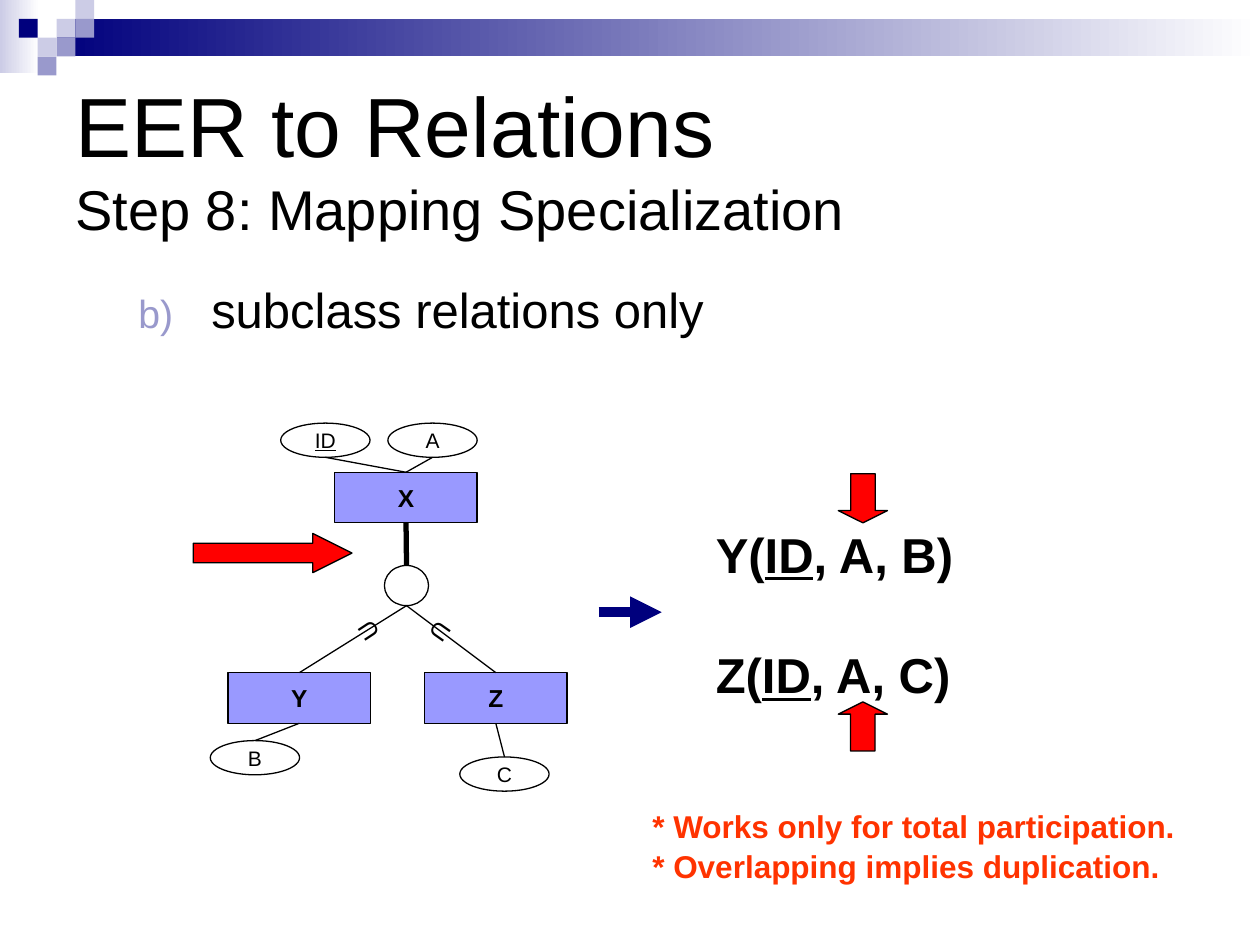
from lxml.etree import SubElement
from pptx import Presentation
from pptx.dml.color import RGBColor
from pptx.enum.shapes import MSO_CONNECTOR, MSO_SHAPE
from pptx.enum.text import MSO_ANCHOR, MSO_AUTO_SIZE, PP_ALIGN
from pptx.oxml.ns import qn
from pptx.util import Cm, Pt

BLACK, WHITE, NAVY, RED = "000000", "FFFFFF", "00007D", "FF0000"
LILAC, PALE, ENTITY, NOTE = "9999CC", "CCCCE6", "9999FF", "FF3300"


def rgb(color):
    return RGBColor.from_string(color)


def style(r, size, color=BLACK, bold=False, underline=None):
    r.font.name = "Arial"
    r.font.size = Pt(size)
    r.font.bold = bold
    r.font.underline = underline
    r.font.color.rgb = rgb(color)


def add_shape(s, kind, x, y, w, h, fill, line=BLACK):
    sp = s.shapes.add_shape(kind, Cm(x), Cm(y), Cm(w), Cm(h))
    sp.shadow.inherit = False
    sp.fill.solid()
    sp.fill.fore_color.rgb = rgb(fill)
    if line:
        sp.line.color.rgb = rgb(line)
        sp.line.width = Pt(0.75)
    else:
        sp.line.fill.background()
    return sp


def add_node(s, kind, x, y, w, h, fill, label, size, bold=False, underline=None):
    sp = add_shape(s, kind, x, y, w, h, fill)
    tf = sp.text_frame
    tf.word_wrap = False
    tf.vertical_anchor = MSO_ANCHOR.MIDDLE
    tf.text = label
    p = tf.paragraphs[0]
    p.alignment = PP_ALIGN.CENTER
    style(p.runs[0], size, BLACK, bold, underline)
    return sp


def add_text(s, x, y, w, h, text, wrap=True):
    tb = s.shapes.add_textbox(Cm(x), Cm(y), Cm(w), Cm(h))
    tb.text_frame.word_wrap = wrap
    tb.text_frame.text = text
    return tb


def add_line(s, x1, y1, x2, y2, color=BLACK, width=0.75):
    ln = s.shapes.add_connector(MSO_CONNECTOR.STRAIGHT, x1, y1, x2, y2)
    ln.line.color.rgb = rgb(color)
    ln.line.width = Pt(width)
    SubElement(ln._element.spPr, qn("a:effectLst"))
    return ln


def link(s, upper, lower, width=0.75):
    add_line(s, upper.left + upper.width // 2, upper.top + upper.height,
             lower.left + lower.width // 2, lower.top, width=width)


def add_arrow(s, x, y, w, h, rotation, head):
    sp = add_shape(s, MSO_SHAPE.UP_ARROW, x, y, w, h, RED)
    sp.adjustments[0] = 0.5
    sp.adjustments[1] = head
    sp.rotation = rotation


def add_banner(s, x, y):
    for dx, dy, w, h, start in ((0, 0, 0.79, 1.47, PALE), (1.14, 0.38, 24.26, 0.76, NAVY)):
        sp = add_shape(s, MSO_SHAPE.RECTANGLE, x + dx, y + dy, w, h, WHITE, None)
        sp.fill.gradient()
        sp.fill.gradient_angle = 0
        for stop, color in zip(sp.fill.gradient_stops, (start, WHITE)):
            stop.color.rgb = rgb(color)
    unit = 0.38
    tiles = ((3, 1, PALE), (4, 0, PALE), (4, 1, LILAC), (2, 2, PALE),
             (1, 1, NAVY), (3, 2, LILAC), (2, 3, LILAC))
    for col, row, color in tiles:
        add_shape(s, MSO_SHAPE.RECTANGLE, x + col * unit, y + row * unit,
                  unit, unit, color, None)


def add_heading(s, x, y):
    tf = add_text(s, x, y, 22.86, 3.81,
                  "EER to Relations\vStep 8: Mapping Specialization").text_frame
    tf.vertical_anchor = MSO_ANCHOR.MIDDLE
    for r, size in zip(tf.paragraphs[0].runs, (48, 32)):
        style(r, size)


def add_body(s, x, y):
    p = add_text(s, x, y, 22.86, 10.8, "subclass relations only").text_frame.paragraphs[0]
    p.space_before = Pt(5.6)
    style(p.runs[0], 28)
    pPr = p._p.get_or_add_pPr()
    pPr.set("marL", str(Cm(2.74)))
    pPr.set("indent", str(Cm(-1.47)))
    SubElement(SubElement(pPr, qn("a:buClr")), qn("a:srgbClr"), val=LILAC)
    SubElement(pPr, qn("a:buSzPct"), val="80000")
    SubElement(pPr, qn("a:buFont"), typeface="Arial")
    SubElement(pPr, qn("a:buAutoNum"), type="alphaLcParenR", startAt="2")


def add_diagram(s, x, y):
    nodes = {}
    for label, dx, dy in (("X", 2.51, 0.99), ("Z", 4.32, 5.03), ("Y", 0.36, 5.03)):
        nodes[label] = add_node(s, MSO_SHAPE.RECTANGLE, x + dx, y + dy, 2.87, 1.02,
                                ENTITY, label, 14, bold=True)
    attributes = (("ID", 1.42, 0), ("A", 3.58, 0), ("B", 0, 6.4), ("C", 5.03, 6.73))
    for label, dx, dy in attributes:
        nodes[label] = add_node(s, MSO_SHAPE.OVAL, x + dx, y + dy, 1.8, 0.69,
                                WHITE, label, 12, underline=label == "ID" or None)
    circle = add_shape(s, MSO_SHAPE.OVAL, x + 3.51, y + 2.87, 0.89, 0.81, WHITE)
    link(s, nodes["X"], circle, 3)
    for subclass in "YZ":
        link(s, circle, nodes[subclass])
    for upper, lower in (("Y", "B"), ("Z", "C"), ("A", "X"), ("ID", "X")):
        link(s, nodes[upper], nodes[lower])
    for dx, dy, rotation in ((2.74, 3.78, 236.6), (4.22, 3.81, 125.2)):
        tb = add_text(s, x + dx, y + dy, 0.86, 0.84, "U", wrap=False)
        tb.text_frame.auto_size = MSO_AUTO_SIZE.SHAPE_TO_FIT_TEXT
        tb.rotation = rotation
        style(tb.text_frame.paragraphs[0].runs[0], 14)
    add_arrow(s, x + 0.86, y + 1.02, 0.79, 3.2, 90, 1)


def add_relations(s, x, y):
    tf = add_text(s, x + 2.11, y + 0.89, 9.96, 3.81, "").text_frame
    for i, parts in enumerate((("Y(", "ID", ", A, B)"), ("Z(", "ID", ", A, C)"))):
        p = tf.add_paragraph() if i else tf.paragraphs[0]
        p.space_before = Pt(35.5 * i)
        for part in parts:
            r = p.add_run()
            r.text = part
            style(r, 28, bold=True, underline=part == "ID")
    ln = add_line(s, Cm(x), Cm(y + 2.79), Cm(x + 1.27), Cm(y + 2.79), NAVY, 6)
    SubElement(ln.line._get_or_add_ln(), qn("a:tailEnd"), type="triangle")
    for dy, rotation in ((4.6, 0), (0, 180)):
        add_arrow(s, x + 4.83, y + dy, 0.99, 0.99, rotation, 0.25)


def add_notes(s, x, y):
    tf = add_text(s, x, y, 11.81, 1.78, "* Works only for total participation.\n"
                  "* Overlapping implies duplication.").text_frame
    for p in tf.paragraphs:
        p.space_before = Pt(1)
        style(p.runs[0], 18, NOTE, bold=True)


def main():
    prs = Presentation()
    prs.slide_width, prs.slide_height = Cm(25.4), Cm(19.05)
    s = prs.slides.add_slide(prs.slide_layouts[6])
    add_banner(s, 0, 0)
    add_heading(s, 1.27, 1.27)
    add_body(s, 1.27, 5.51)
    add_diagram(s, 4.24, 8.53)
    add_relations(s, 12.07, 9.55)
    add_notes(s, 12.9, 16.15)
    prs.save("out.pptx")


if __name__ == "__main__":
    main()
